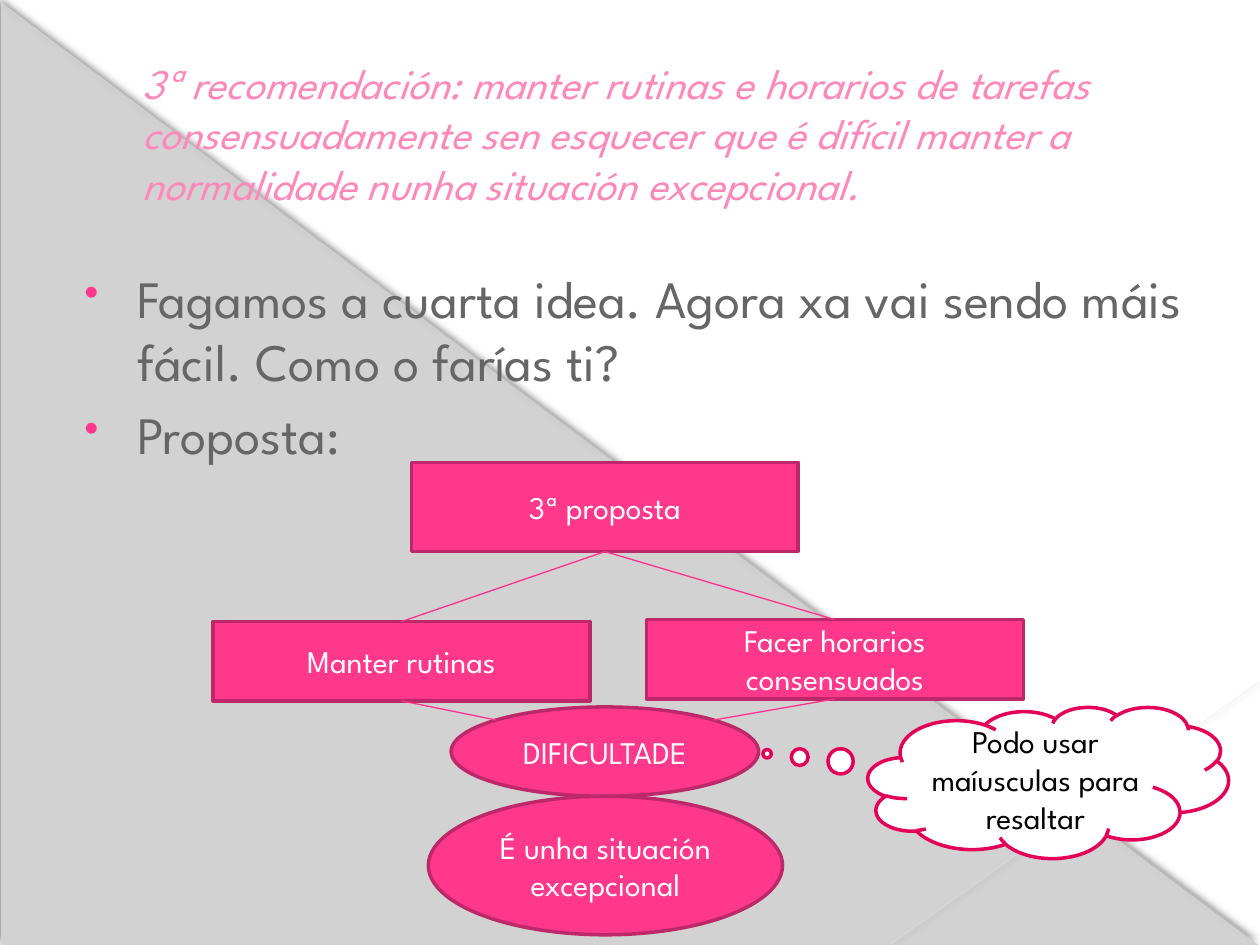
import math

from lxml import etree
from pptx import Presentation
from pptx.dml.color import RGBColor
from pptx.enum.shapes import MSO_CONNECTOR, MSO_SHAPE
from pptx.enum.text import MSO_ANCHOR, PP_ALIGN
from pptx.oxml.ns import qn
from pptx.util import Pt

RECTANGLE, ELLIPSE = MSO_SHAPE.RECTANGLE, MSO_SHAPE.OVAL
CLOUD, TRIANGLE = MSO_SHAPE.CLOUD_CALLOUT, MSO_SHAPE.RIGHT_TRIANGLE
STRAIGHT = MSO_CONNECTOR.STRAIGHT
TOP, MIDDLE = MSO_ANCHOR.TOP, MSO_ANCHOR.MIDDLE
LEFT, CENTER = PP_ALIGN.LEFT, PP_ALIGN.CENTER

FONT = "League Spartan"
WHITE = RGBColor(0xFF, 0xFF, 0xFF)
BLACK = RGBColor(0x00, 0x00, 0x00)
PINK = RGBColor(0xFF, 0x38, 0x8C)
PALE_PINK = RGBColor(0xFF, 0x88, 0xBA)
DARK_PINK = RGBColor(0xBD, 0x29, 0x68)
LINK_PINK = RGBColor(0xFE, 0x31, 0x87)
CLOUD_PINK = RGBColor(0xE4, 0x00, 0x59)
BODY_GRAY = RGBColor(0x66, 0x66, 0x66)
TRIANGLE_GRAY = RGBColor(0xD2, 0xD2, 0xD2)
DIAGONAL_GRAY = RGBColor(0xE8, 0xE8, 0xE8)
CORNER_GRAY = RGBColor(0xEA, 0xEA, 0xEA)

BOTTOM_SITE, TOP_SITE = 2, 0


def add_alpha(color_element, percent):
    etree.SubElement(color_element, qn("a:alpha"), val=str(percent * 1000))


def add_outer_shadow(effects, alpha, blur, distance, angle):
    shadow = etree.SubElement(
        effects, qn("a:outerShdw"), blurRad=str(Pt(blur)), dist=str(Pt(distance)),
        dir=str(angle * 60000), algn="tl", rotWithShape="0")
    add_alpha(etree.SubElement(shadow, qn("a:srgbClr"), val=str(BLACK)), alpha)


def write_text(shape, *paragraphs, size=18, color=WHITE, italic=False, align=CENTER,
               anchor=MIDDLE, margin=0, indent=0, space_before=0, bullet=None):
    frame = shape.text_frame
    frame.word_wrap = True
    frame.vertical_anchor = anchor
    for index, text in enumerate(paragraphs):
        paragraph = frame.add_paragraph() if index else frame.paragraphs[0]
        paragraph.alignment = align
        paragraph.space_before = Pt(space_before)
        run = paragraph.add_run()
        run.text = text
        run.font.name, run.font.size, run.font.italic = FONT, Pt(size), italic
        run.font.color.rgb = color
        properties = paragraph._p.get_or_add_pPr()
        properties.set("marL", str(Pt(margin)))
        properties.set("indent", str(Pt(indent)))
        if bullet:
            bullet_color = etree.SubElement(properties, qn("a:buClr"))
            etree.SubElement(bullet_color, qn("a:srgbClr"), val=str(PINK))
            etree.SubElement(properties, qn("a:buSzPct"), val="80000")
            etree.SubElement(properties, qn("a:buChar"), char=bullet)


def add_text_box(slide, box, *paragraphs, **text_format):
    write_text(slide.shapes.add_textbox(*map(Pt, box)), *paragraphs, **text_format)


def add_figure(slide, preset, box, fill=PINK, outline=DARK_PINK):
    figure = slide.shapes.add_shape(preset, *map(Pt, box))
    figure.shadow.inherit = False
    figure.fill.solid()
    figure.fill.fore_color.rgb = fill
    if outline is None:
        figure.line.fill.background()
    else:
        figure.line.color.rgb = outline
        figure.line.width = Pt(2)
    return figure


def add_node(slide, preset, box, text):
    node = add_figure(slide, preset, box)
    write_text(node, text)
    return node


def add_line(slide, start, end, color, width):
    """Draw a straight line and return it with its empty effect list."""
    line = slide.shapes.add_connector(STRAIGHT, *start, *end)
    line.line.color.rgb = color
    line.line.width = Pt(width)
    effects = etree.SubElement(line._element.spPr, qn("a:effectLst"))
    return line, effects


def add_faint_line(slide, start, end, color, width, opacity):
    line, effects = add_line(slide, map(Pt, start), map(Pt, end), color, width)
    add_alpha(line._element.spPr.find(".//" + qn("a:srgbClr")), opacity)
    add_outer_shadow(effects, alpha=38, blur=3.1, distance=1.6, angle=90)


def link_down(slide, upper, lower):
    line, _ = add_line(slide, (0, 0), (0, 0), LINK_PINK, 0.75)
    line.begin_connect(upper, BOTTOM_SITE)
    line.end_connect(lower, TOP_SITE)


def link_to_ellipse(slide, node, ellipse, side):
    """Join a node to the ellipse's upper shoulder; side is -1 left, 1 right."""
    reach = math.sqrt(0.5)
    shoulder = (
        int(ellipse.left + ellipse.width / 2 * (1 + side * reach)),
        int(ellipse.top + ellipse.height / 2 * (1 - reach)),
    )
    line, _ = add_line(slide, (0, 0), shoulder, LINK_PINK, 0.75)
    line.begin_connect(node, BOTTOM_SITE)


def add_backdrop(slide):
    triangle = add_figure(slide, TRIANGLE, (0.72, 1.44, 718.56, 538.56), TRIANGLE_GRAY, None)
    effects = triangle._element.spPr.find(qn("a:effectLst"))
    add_outer_shadow(effects, alpha=50, blur=5, distance=2, angle=245)
    add_faint_line(slide, (0, 0.72), (719.28, 539.28), DIAGONAL_GRAY, 0.4, 35)
    add_faint_line(slide, (720, 389.5), (509, 539.28), CORNER_GRAY, 0.48, 45)


def add_diagram(slide):
    proposal = add_node(slide, RECTANGLE, (235.2, 264.2, 221, 51), "3ª proposta")
    routines = add_node(slide, RECTANGLE, (121.7, 355.2, 215.5, 45.3), "Manter rutinas")
    timetables = add_node(slide, RECTANGLE, (369.4, 354.1, 215.5, 45.3),
                          "Facer horarios consensuados")
    add_node(slide, ELLIPSE, (244.8, 455, 202.4, 79.2), "É unha situación excepcional")
    difficulty = add_node(slide, ELLIPSE, (257.8, 404, 175.7, 51), "DIFICULTADE")

    for task, side in ((routines, -1), (timetables, 1)):
        link_down(slide, proposal, task)
        link_to_ellipse(slide, task, difficulty, side)

    thought = add_figure(slide, CLOUD, (496, 404, 206, 86.4), WHITE, CLOUD_PINK)
    thought.adjustments[0], thought.adjustments[1] = -0.78, -0.19
    write_text(thought, "Podo usar maíusculas para resaltar", color=BLACK)


def main():
    presentation = Presentation()
    presentation.slide_width, presentation.slide_height = Pt(720), Pt(540)
    slide = presentation.slides.add_slide(presentation.slide_layouts[6])
    slide.background.fill.solid()
    slide.background.fill.fore_color.rgb = WHITE

    add_backdrop(slide)
    add_text_box(
        slide, (36, 21, 648, 110),
        "3ª recomendación: manter rutinas e horarios de tarefas consensuadamente "
        "sen esquecer que é difícil manter a normalidade nunha situación excepcional.",
        size=24, color=PALE_PINK, italic=True, align=LEFT, margin=38.2)
    add_text_box(
        slide, (36, 148.3, 648, 360),
        "Fagamos a cuarta idea. Agora xa vai sendo máis fácil. Como o farías ti?",
        "Proposta:",
        size=30, color=BODY_GRAY, align=LEFT, anchor=TOP,
        margin=35.3, indent=-30.2, space_before=6, bullet="•")
    add_diagram(slide)
    presentation.save("out.pptx")


if __name__ == "__main__":
    main()
